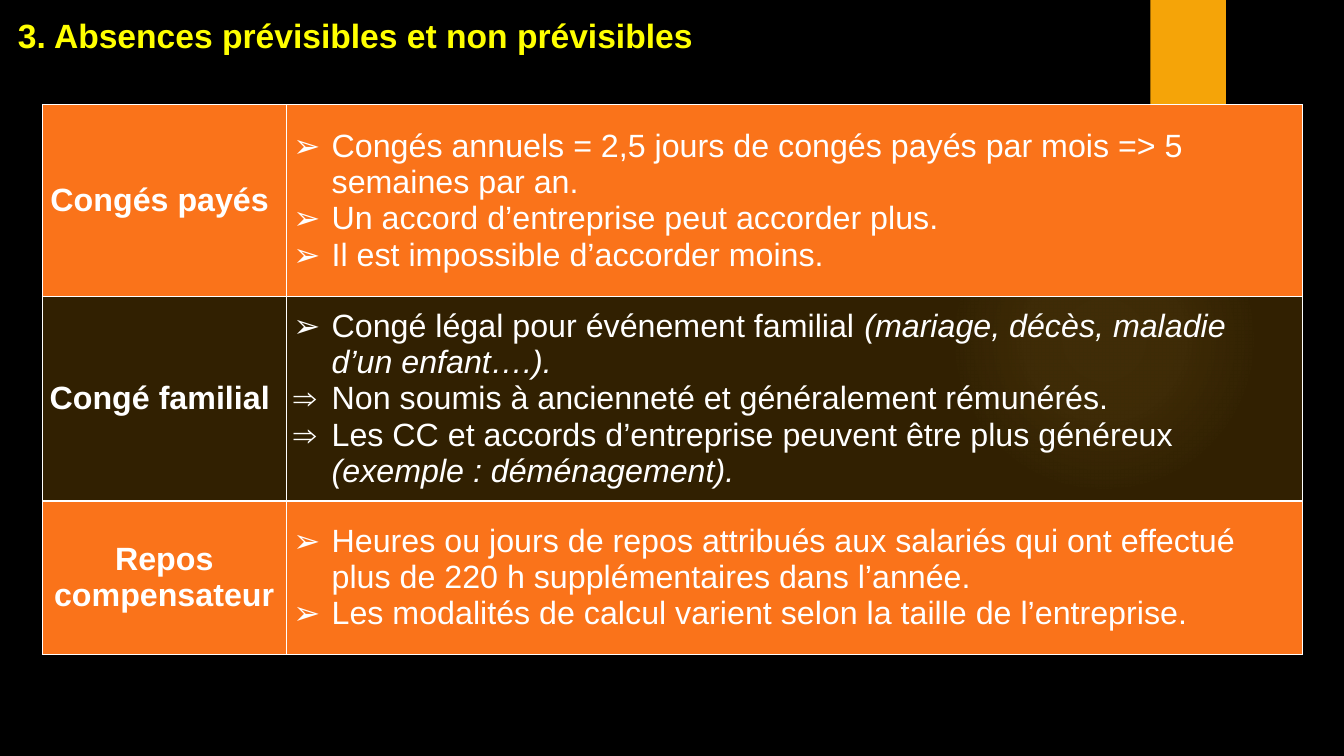
from lxml.etree import SubElement, fromstring
from pptx import Presentation
from pptx.dml.color import RGBColor
from pptx.enum.shapes import MSO_SHAPE as Preset
from pptx.enum.text import MSO_ANCHOR as Anchor, PP_ALIGN as Align
from pptx.oxml.ns import nsdecls, qn
from pptx.util import Inches, Pt

COLORS = {
    "background": "000000", "glow": "FAC96A", "gold": "F5A408",
    "orange": "FA731A", "title": "FFFF00", "text": "FFFFFF",
}
FONT = "Arial"
INDENT = Inches(0.38)
COLUMN_WIDTHS = [2.42, 10.08]
ROW_HEIGHTS = [1.9, 2.03, 1.52]
ARROW, IMPLIES = "➢", "⇒"

ABSENCES = [
    ("Congés payés\u00a0", [
        (ARROW, "Congés annuels = 2,5 jours de congés payés par mois => 5 semaines par an.", ""),
        (ARROW, "Un accord d’entreprise peut accorder plus.", ""),
        (ARROW, "Il est impossible d’accorder moins.", ""),
    ]),
    ("Congé familial\u00a0", [
        (ARROW, "Congé légal pour événement familial ", "(mariage, décès, maladie d’un enfant….)."),
        (IMPLIES, "Non soumis à ancienneté et généralement rémunérés.", ""),
        (IMPLIES, "Les CC et accords d’entreprise peuvent être plus généreux ", "(exemple : déménagement)."),
    ]),
    ("Repos compensateur", [
        (ARROW, "Heures ou jours de repos attribués aux salariés qui ont effectué "
                "plus de 220 h supplémentaires dans l’année.", ""),
        (ARROW, "Les modalités de calcul varient selon la taille de l’entreprise.", ""),
    ]),
]


def rgb(name):
    """Return the named colour."""
    return RGBColor.from_string(COLORS[name])


def add_run(paragraph, text, size=23, color="text", bold=False, italic=False):
    """Append a formatted run to a paragraph."""
    run = paragraph.add_run()
    run.text = text
    font = run.font
    font.name, font.size, font.bold, font.italic = FONT, Pt(size), bold, italic
    font.color.rgb = rgb(color)


def add_preset(slide, preset, left, top, width, height, color):
    """Add a plain filled shape without outline."""
    shape = slide.shapes.add_shape(preset, Inches(left), Inches(top), Inches(width), Inches(height))
    shape.shadow.inherit = False
    shape.fill.solid()
    shape.fill.fore_color.rgb = rgb(color)
    shape.line.fill.background()
    return shape


def add_glow(slide):
    """Add the faint circle that fades toward its edge."""
    shape = add_preset(slide, Preset.OVAL, 9.41, 1.83, 3.08, 3.08, "glow")
    stops = "".join(
        f'<a:gs pos="{position * 1000}"><a:srgbClr val="{COLORS["glow"]}">'
        f'<a:alpha val="{alpha * 1000}"/></a:srgbClr></a:gs>'
        for position, alpha in [(0, 7), (36, 6), (69, 0), (100, 0)])
    gradient = fromstring(
        f'<a:gradFill {nsdecls("a")}><a:gsLst>{stops}</a:gsLst><a:path path="circle">'
        '<a:fillToRect l="50000" t="50000" r="50000" b="50000"/></a:path></a:gradFill>')
    properties = shape.element.spPr
    properties.replace(properties.find(qn("a:solidFill")), gradient)


def add_title(slide, text):
    """Add the heading of the slide."""
    frame = slide.shapes.add_textbox(Inches(0.08), Inches(0.13), Inches(11.23), Inches(0.47)).text_frame
    frame.word_wrap = True
    frame.vertical_anchor = Anchor.BOTTOM
    add_run(frame.paragraphs[0], text, size=24, color="title", bold=True)


def format_cell(cell, color, alpha):
    """Set the margins, borders and fill of a cell."""
    cell.vertical_anchor = Anchor.MIDDLE
    cell.margin_left = cell.margin_right = Inches(0.07)
    cell.margin_top = cell.margin_bottom = 0
    properties = cell._tc.get_or_add_tcPr()
    for side in ("lnL", "lnR", "lnT", "lnB"):
        border = SubElement(properties, qn(f"a:{side}"), w=str(Pt(1)))
        fill = SubElement(border, qn("a:solidFill"))
        SubElement(fill, qn("a:srgbClr"), val=COLORS["text"])
    fill = SubElement(properties, qn("a:solidFill"))
    fill_color = SubElement(fill, qn("a:srgbClr"), val=COLORS[color])
    if alpha < 100:
        SubElement(fill_color, qn("a:alpha"), val=str(alpha * 1000))


def add_bullets(frame, items):
    """Fill a text frame with bulleted paragraphs."""
    for index, (bullet, plain, italic) in enumerate(items):
        paragraph = frame.add_paragraph() if index else frame.paragraphs[0]
        properties = paragraph._p.get_or_add_pPr()
        properties.set("marL", str(INDENT))
        properties.set("indent", str(-INDENT))
        SubElement(properties, qn("a:buFont"), typeface=FONT)
        SubElement(properties, qn("a:buChar"), char=bullet)
        add_run(paragraph, plain)
        if italic:
            add_run(paragraph, italic, italic=True)


def add_absence_table(slide):
    """Add the table of absence types."""
    table = slide.shapes.add_table(
        len(ROW_HEIGHTS), len(COLUMN_WIDTHS), Inches(0.42), Inches(1.04),
        Inches(sum(COLUMN_WIDTHS)), Inches(sum(ROW_HEIGHTS))).table
    table.first_row = table.horz_banding = False
    for column, width in zip(table.columns, COLUMN_WIDTHS):
        column.width = Inches(width)
    for index, (name, items) in enumerate(ABSENCES):
        row = table.rows[index]
        row.height = Inches(ROW_HEIGHTS[index])
        color, alpha = ("gold", 20) if index % 2 else ("orange", 100)
        for cell in row.cells:
            format_cell(cell, color, alpha)
        name_cell, detail_cell = row.cells
        paragraph = name_cell.text_frame.paragraphs[0]
        paragraph.alignment = Align.CENTER
        add_run(paragraph, name, bold=True)
        add_bullets(detail_cell.text_frame, items)


def main():
    """Build and save the presentation."""
    presentation = Presentation()
    presentation.slide_width, presentation.slide_height = Inches(13.33), Inches(7.5)
    slide = presentation.slides.add_slide(presentation.slide_layouts[6])
    slide.background.fill.solid()
    slide.background.fill.fore_color.rgb = rgb("background")
    add_glow(slide)
    add_preset(slide, Preset.RECTANGLE, 11.41, 0, 0.75, 1.25, "gold")
    add_title(slide, "3. Absences prévisibles et non prévisibles")
    add_absence_table(slide)
    presentation.save("out.pptx")


if __name__ == "__main__":
    main()
